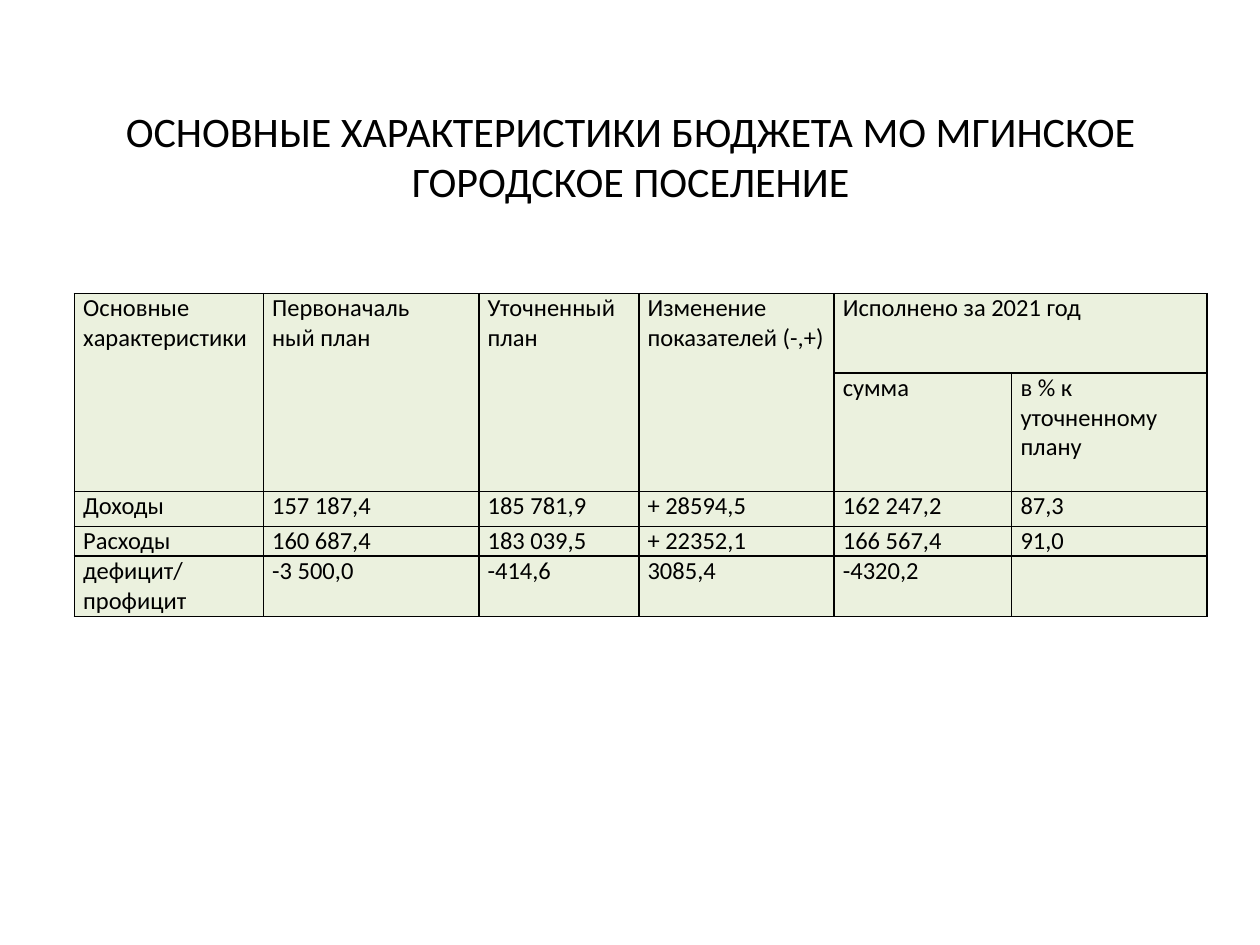
from lxml.etree import SubElement
from pptx import Presentation
from pptx.dml.color import RGBColor
from pptx.enum.text import MSO_ANCHOR, PP_ALIGN
from pptx.oxml.ns import qn
from pptx.util import Inches, Pt

BLACK = RGBColor(0x00, 0x00, 0x00)
PALE_GREEN = RGBColor(0xEB, 0xF1, 0xDE)
FONT = "Calibri"

TITLE = "ОСНОВНЫЕ ХАРАКТЕРИСТИКИ БЮДЖЕТА МО МГИНСКОЕ ГОРОДСКОЕ ПОСЕЛЕНИЕ"
COLUMN_WIDTHS = [1.5, 1.71, 1.27, 1.55, 1.41, 1.55]
ROW_HEIGHTS = [0.63, 0.94, 0.28, 0.23, 0.48]
BUDGET = [
    ["Основные характеристики", "Первоначаль\nный план", "Уточненный\nплан",
     "Изменение показателей (-,+)", "Исполнено за 2021 год", ""],
    ["", "", "", "", "сумма", "в % к уточненному плану"],
    ["Доходы", "157 187,4", "185 781,9", "+ 28594,5", "162 247,2", "87,3"],
    ["Расходы", "160 687,4", "183 039,5", "+ 22352,1", "166 567,4", "91,0"],
    ["дефицит/профицит", "-3 500,0", "-414,6", "3085,4", "-4320,2", ""],
]


def add_text(tf, text, size, align=PP_ALIGN.LEFT):
    for i, line in enumerate(text.split("\n")):
        p = tf.add_paragraph() if i else tf.paragraphs[0]
        p.alignment = align
        p.font.size = Pt(size)
        if line:
            r = p.add_run()
            r.text = line
            r.font.name = FONT
            r.font.size = Pt(size)
            r.font.color.rgb = BLACK


def add_title(s):
    sp = s.shapes.add_textbox(Inches(0.51), Inches(0.3), Inches(8.99), Inches(1.87))
    tf = sp.text_frame
    tf.word_wrap = True
    tf.vertical_anchor = MSO_ANCHOR.MIDDLE
    add_text(tf, TITLE, 24, PP_ALIGN.CENTER)


def add_borders(cell):
    tc_pr = cell._tc.get_or_add_tcPr()
    for side in ("lnL", "lnR", "lnT", "lnB"):
        ln = SubElement(tc_pr, qn(f"a:{side}"), w=str(Pt(1)))
        fill = SubElement(ln, qn("a:solidFill"))
        SubElement(fill, qn("a:srgbClr"), val=str(BLACK))


def style_cell(cell):
    add_borders(cell)
    cell.fill.solid()
    cell.fill.fore_color.rgb = PALE_GREEN
    cell.margin_left = cell.margin_right = Inches(0.07)
    cell.margin_top = cell.margin_bottom = 0


def add_budget_table(s):
    table = s.shapes.add_table(
        len(ROW_HEIGHTS), len(COLUMN_WIDTHS), Inches(0.59), Inches(2.33),
        Inches(sum(COLUMN_WIDTHS)), Inches(sum(ROW_HEIGHTS))).table
    table.first_row = table.horz_banding = False
    for column, width in zip(table.columns, COLUMN_WIDTHS):
        column.width = Inches(width)
    for row, height, texts in zip(table.rows, ROW_HEIGHTS, BUDGET):
        row.height = Inches(height)
        for cell, text in zip(row.cells, texts):
            style_cell(cell)
            add_text(cell.text_frame, text, 14)
    for col in range(4):
        table.cell(0, col).merge(table.cell(1, col))
    table.cell(0, 4).merge(table.cell(0, 5))


def main():
    prs = Presentation()
    prs.slide_width, prs.slide_height = Inches(10), Inches(7.5)
    s = prs.slides.add_slide(prs.slide_layouts[6])
    add_title(s)
    add_budget_table(s)
    prs.save("out.pptx")


if __name__ == "__main__":
    main()
